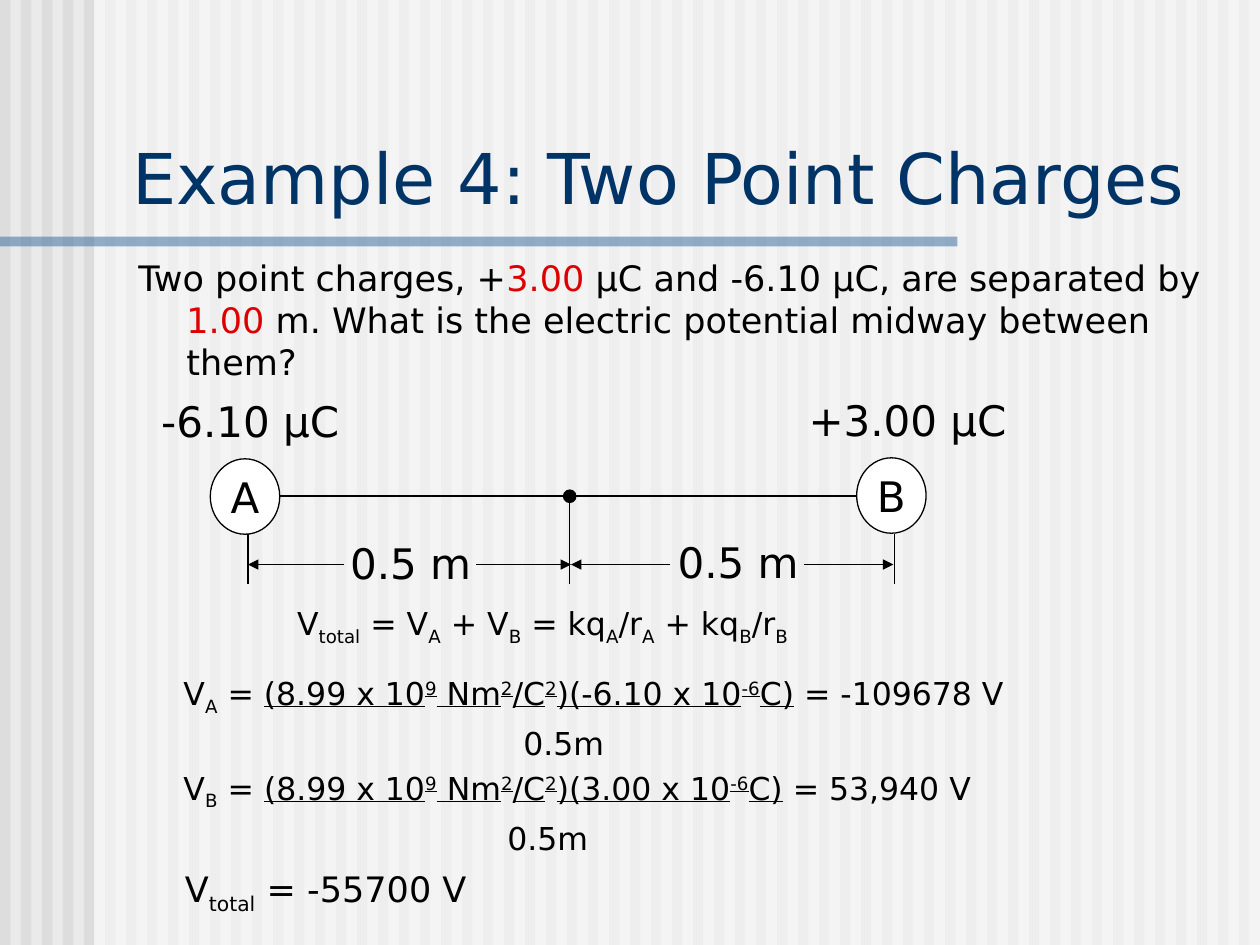
import pptx
import pptx.dml.color
import pptx.enum.shapes
import pptx.enum.text
import pptx.oxml
import pptx.oxml.ns
import pptx.util
from lxml import etree

Cm = pptx.util.Cm
Pt = pptx.util.Pt
SHAPES = pptx.enum.shapes.MSO_SHAPE
ANCHOR = pptx.enum.text.MSO_ANCHOR
ALIGN = pptx.enum.text.PP_ALIGN

SUB = {"baseline": "-25000"}
UNDER = {"u": "sng"}
SUPER = {"baseline": "30000", "u": "sng"}
RED = {"color": "DD0000"}


def rgb(value):
    return pptx.dml.color.RGBColor.from_string(value)


def set_values(target, values):
    for name, value in values.items():
        setattr(target, name, value)


def add_child(parent, tag, **attributes):
    child = etree.SubElement(parent, pptx.oxml.ns.qn(tag))
    for name, value in attributes.items():
        child.set(name, value)


class SlideBuilder:
    font = "DejaVu Sans"
    ink = "000000"
    line_width = Pt(0.75)

    def __init__(self, slide):
        self.slide = slide

    def background(self, color):
        fill = self.slide.background.fill
        fill.solid()
        fill.fore_color.rgb = rgb(color)

    def add_runs(self, paragraph, runs, size, color=None):
        for text, style in runs:
            run = paragraph.add_run()
            run.text = text
            set_values(run.font, {"name": self.font, "size": Pt(size)})
            run.font.color.rgb = rgb(style.get("color", color or self.ink))
            for name in ("baseline", "u"):
                if name in style:
                    run._r.get_or_add_rPr().set(name, style[name])

    def title(self, box, text, size, color):
        title = self.slide.shapes.title
        set_values(title, dict(zip(("left", "top", "width", "height"), map(Cm, box))))
        set_values(title.text_frame, {"vertical_anchor": ANCHOR.BOTTOM, "word_wrap": True})
        paragraph = title.text_frame.paragraphs[0]
        paragraph.alignment = ALIGN.LEFT
        self.add_runs(paragraph, [(text, {})], size, color)
        self.slide.shapes._spTree.append(title._element)

    def text(self, box, paragraphs, size, space=0, left=(0,), first=0):
        frame = self.slide.shapes.add_textbox(*map(Cm, box)).text_frame
        frame.word_wrap = True
        for number, runs in enumerate(paragraphs):
            paragraph = frame.add_paragraph() if number else frame.paragraphs[0]
            if number:
                paragraph.space_before = Pt(space)
            properties = paragraph._p.get_or_add_pPr()
            properties.set("marL", str(Cm(left[number % len(left)])))
            properties.set("indent", str(Cm(first)))
            self.add_runs(paragraph, runs, size)

    def shape(self, kind, box, fill, outlined=False, alpha=None, label=None):
        shape = self.slide.shapes.add_shape(kind, *map(Cm, box))
        shape.shadow.inherit = False
        shape.fill.solid()
        shape.fill.fore_color.rgb = rgb(fill)
        if alpha:
            color = shape._element.spPr.find(".//" + pptx.oxml.ns.qn("a:srgbClr"))
            add_child(color, "a:alpha", val=str(alpha * 1000))
        if outlined:
            shape.line.color.rgb = rgb(self.ink)
            shape.line.width = self.line_width
        else:
            shape.line.fill.background()
        if label:
            frame = shape.text_frame
            set_values(frame, {"vertical_anchor": ANCHOR.MIDDLE, "word_wrap": False})
            frame.paragraphs[0].alignment = ALIGN.CENTER
            self.add_runs(frame.paragraphs[0], [(label, {})], 24)

    def line(self, start, end, arrow=False):
        line = self.slide.shapes.add_connector(
            pptx.enum.shapes.MSO_CONNECTOR.STRAIGHT, *map(Cm, start + end))
        line.line.color.rgb = rgb(self.ink)
        line.line.width = self.line_width
        if arrow:
            add_child(line.line._get_or_add_ln(), "a:tailEnd", type="triangle")
        add_child(line._element.spPr, "a:effectLst")


def potential(charge, factor, result):
    return [
        ("V", {}), (charge, SUB), (" = ", {}), ("(8.99 x 10", UNDER), ("9", SUPER),
        (" Nm", UNDER), ("2", SUPER), ("/C", UNDER), ("2", SUPER),
        (f")({factor} x 10", UNDER), ("-6", SUPER), ("C)", UNDER), (f" = {result} V", {}),
    ]


def draw_backdrop(builder):
    builder.background("EAEAEA")
    for number in range(60):
        builder.shape(SHAPES.RECTANGLE, (number * 2.54 / 6, 0, 0.21, 19.05), "DDDDDD")
    builder.shape(SHAPES.RECTANGLE, (1.9, 0, 23.5, 19.05), "FFFFFF", alpha=50)
    builder.shape(SHAPES.RECTANGLE, (0, 4.77, 19.3, 0.2), "336699", alpha=50)


def draw_diagram(builder):
    builder.line((5.64, 10), (17.25, 10))
    for label, left, top in (("A", 4.24, 9.25), ("B", 17.27, 9.23)):
        builder.shape(SHAPES.OVAL, (left, top, 1.4, 1.52), "FFFFFF", True, label=label)
    builder.shape(SHAPES.OVAL, (11.36, 9.88, 0.25, 0.25), "000000", True)
    for x, top in ((5, 10.77), (11.48, 10.13), (18.03, 10.77)):
        builder.line((x, top), (x, 11.78))
    for start, end in ((6.93, 5), (9.6, 11.51), (13.51, 11.51), (16.2, 18.01)):
        builder.line((start, 11.38), (end, 11.38), arrow=True)
    for text, left, top, width in (
        ("-6.10 μC", 3, 7.85, 4.24), ("+3.00 μC", 16.05, 7.82, 4.57),
        ("0.5 m", 6.81, 10.72, 3.02), ("0.5 m", 13.41, 10.69, 3.02),
    ):
        builder.text((left, top, width, 1.27), [[(text, {})]], 24)


def main():
    presentation = pptx.Presentation()
    presentation.slide_width, presentation.slide_height = Cm(25.4), Cm(19.05)
    builder = SlideBuilder(presentation.slides.add_slide(presentation.slide_layouts[5]))
    draw_backdrop(builder)
    builder.title((2.41, 2.57, 22.68, 1.96), "Example 4: Two Point Charges", 40, "003366")
    question = [
        ("Two point charges, +", {}), ("3.00", RED),
        (" µC and -6.10 µC, are separated by ", {}), ("1.00", RED),
        (" m. What is the electric potential midway between them?", {}),
    ]
    builder.text((2.54, 5.05, 22.53, 2.97), [question], 20, left=(0.97,), first=-0.97)
    draw_diagram(builder)
    total = [("V", {}), ("total", SUB)]
    formula = total + [
        (" = V", {}), ("A", SUB), (" + V", {}), ("B", SUB), (" = kq", {}), ("A", SUB),
        ("/r", {}), ("A", SUB), (" + kq", {}), ("B", SUB), ("/r", {}), ("B", SUB),
    ]
    builder.text((5.74, 12.05, 11.28, 1.02), [formula], 18)
    distance = [("0.5m", {})]
    builder.text((3.45, 13.46, 17.91, 3.76), [
        potential("A", "-6.10", "-109678"), distance,
        potential("B", "3.00", "53,940"), distance,
    ], 18, space=4, left=(0, 6.85, 0, 6.53))
    builder.text((3.48, 17.36, 6.4, 1.09), [total + [(" = -55700 V", {})]], 20)
    presentation.save("out.pptx")


if __name__ == "__main__":
    main()
